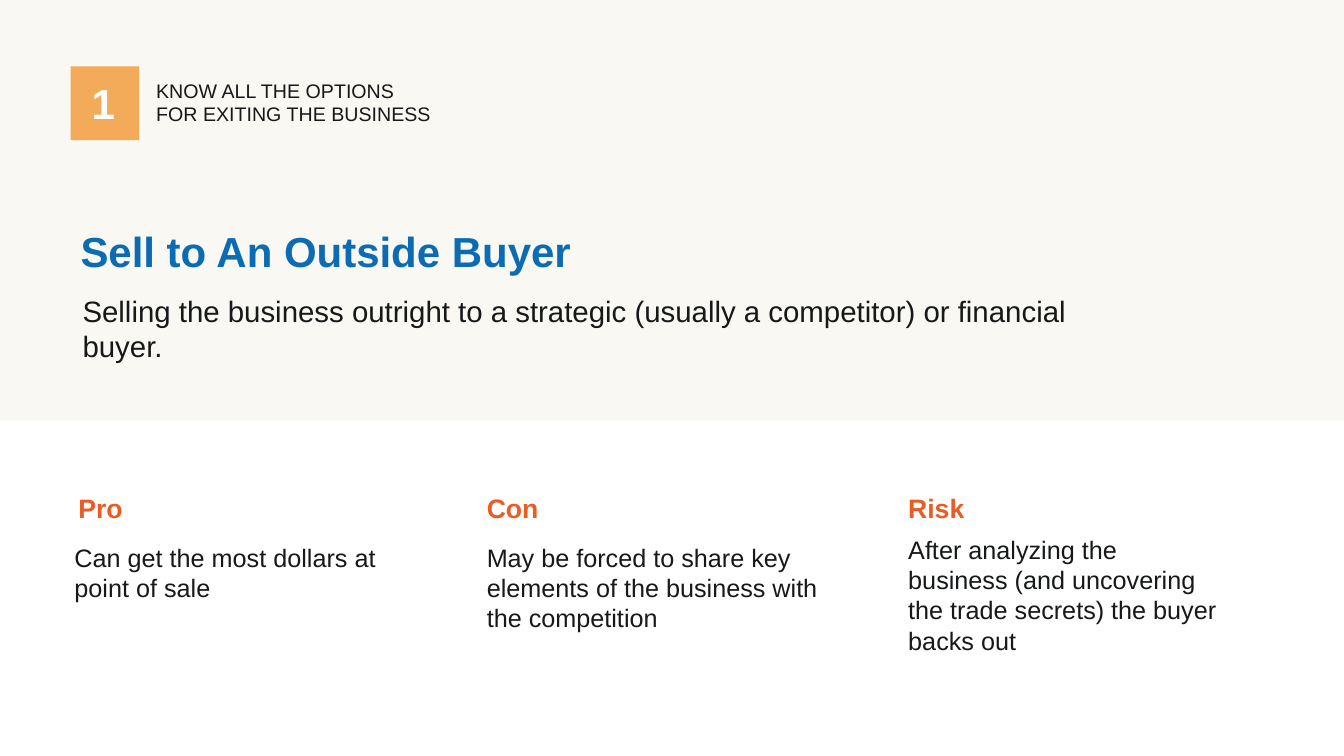
from dataclasses import dataclass

from pptx import Presentation
from pptx.dml.color import RGBColor
from pptx.enum.shapes import MSO_SHAPE
from pptx.util import Inches, Pt


@dataclass(frozen=True)
class Theme:
    font: str = "Arial"
    cream: str = "F9F8F3"
    white: str = "FFFFFF"
    amber: str = "F3AB59"
    orange: str = "E95C24"
    blue: str = "0C6CB3"
    ink: str = "161819"
    title: int = 30
    lead: int = 21
    heading: int = 19
    body: int = 18
    label: int = 14


class SlideBuilder:
    def __init__(self, prs, theme):
        self.theme = theme
        self.s = prs.slides.add_slide(prs.slide_layouts[6])

    def background(self, color):
        fill = self.s.background.fill
        fill.solid()
        fill.fore_color.rgb = RGBColor.from_string(color)

    def rect(self, x, y, w, h, color):
        sp = self.s.shapes.add_shape(
            MSO_SHAPE.RECTANGLE, Inches(x), Inches(y), Inches(w), Inches(h))
        sp.shadow.inherit = False
        sp.fill.solid()
        sp.fill.fore_color.rgb = RGBColor.from_string(color)
        sp.line.fill.background()

    def text(self, x, y, w, h, text, size, color, bold=False):
        sp = self.s.shapes.add_textbox(Inches(x), Inches(y), Inches(w), Inches(h))
        tf = sp.text_frame
        tf.word_wrap = True
        p = tf.paragraphs[0]
        p.text = text
        p.font.name = self.theme.font
        p.font.size = Pt(size)
        p.font.bold = bold
        p.font.color.rgb = RGBColor.from_string(color)


def main():
    prs = Presentation()
    prs.slide_width, prs.slide_height = Inches(13.33), Inches(7.5)
    t = Theme()
    b = SlideBuilder(prs, t)

    # Cream upper area, white lower panel
    b.background(t.cream)
    b.rect(0, 4.17, 13.33, 3.33, t.white)

    # Numbered section label
    b.rect(0.7, 0.66, 0.68, 0.73, t.amber)
    b.text(0.81, 0.72, 0.66, 0.61, "1", t.title, t.white, bold=True)
    b.text(1.45, 0.73, 3.51, 0.57,
           "KNOW ALL THE OPTIONS\vFOR EXITING THE BUSINESS", t.label, t.ink)

    # Title and description
    b.text(0.7, 2.19, 9.91, 0.61, "Sell to An Outside Buyer",
           t.title, t.blue, bold=True)
    b.text(0.72, 2.86, 10.79, 0.81,
           "Selling the business outright to a strategic "
           "(usually a competitor) or financial buyer.", t.lead, t.ink)

    # Columns: heading, heading left, body left, top, width, height, body
    columns = [
        ("Pro", 0.68, 0.64, 5.33, 3.45, 0.71,
         "Can get the most dollars at point of sale"),
        ("Con", 4.73, 4.73, 5.33, 3.6, 1.01,
         "May be forced to share key elements of the business "
         "with the competition"),
        ("Risk", 8.91, 8.91, 5.25, 3.26, 1.31,
         "After analyzing the business (and uncovering the trade secrets) "
         "the buyer backs out"),
    ]
    for heading, head_x, x, y, w, h, body in columns:
        b.text(head_x, 4.83, 3.84, 0.42, heading, t.heading, t.orange, bold=True)
        b.text(x, y, w, h, body, t.body, t.ink)

    prs.save("out.pptx")


if __name__ == "__main__":
    main()
